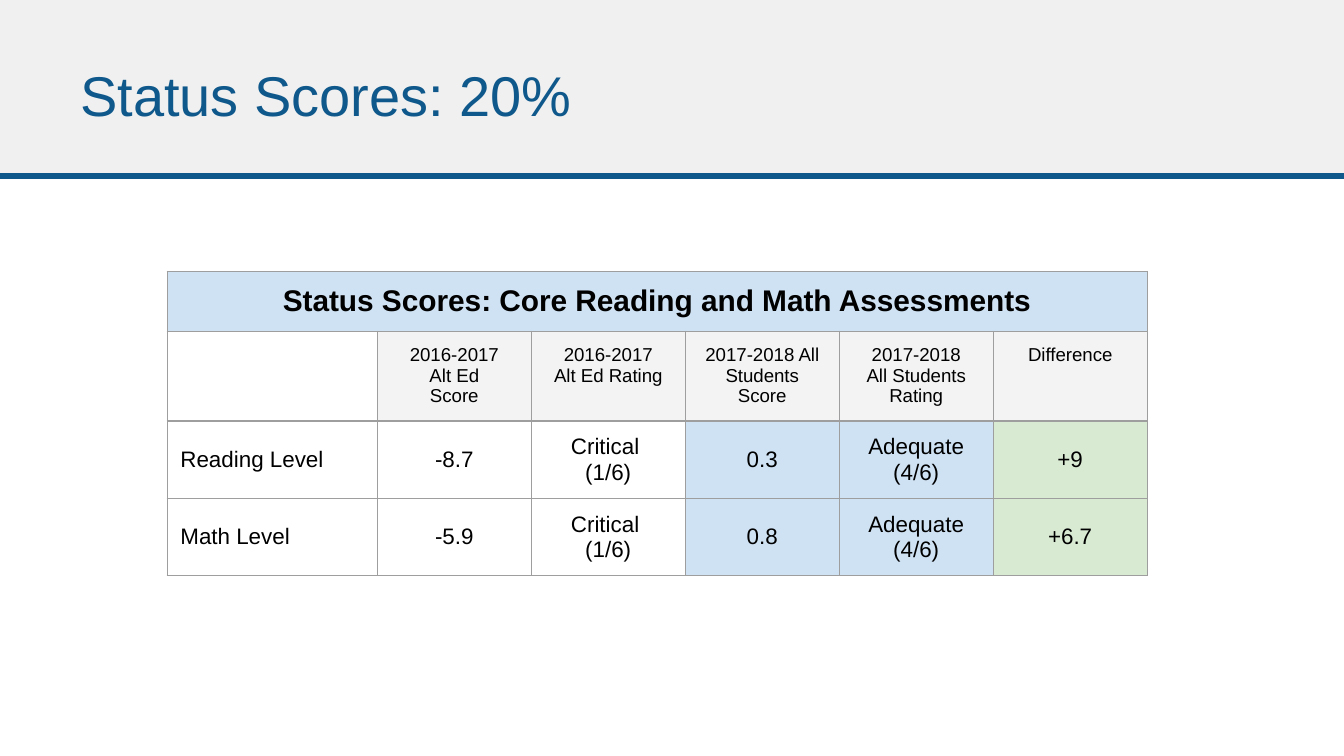
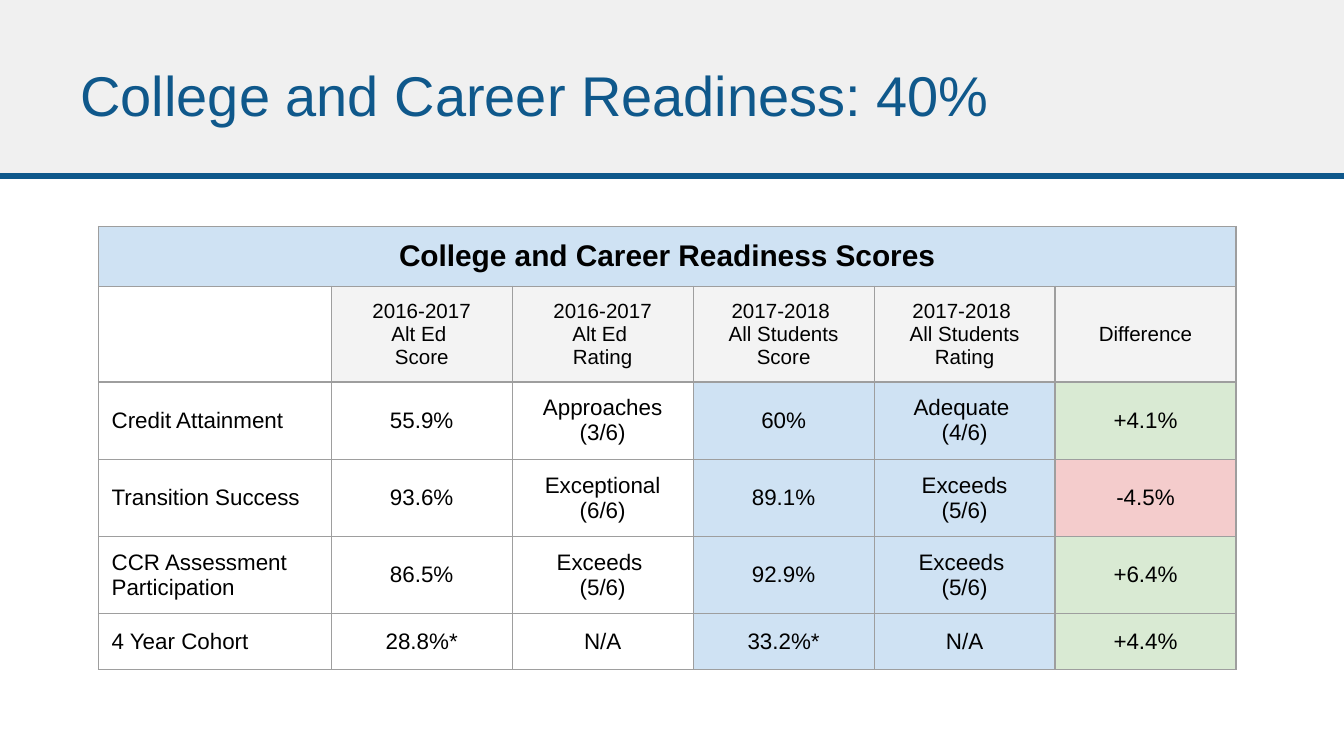
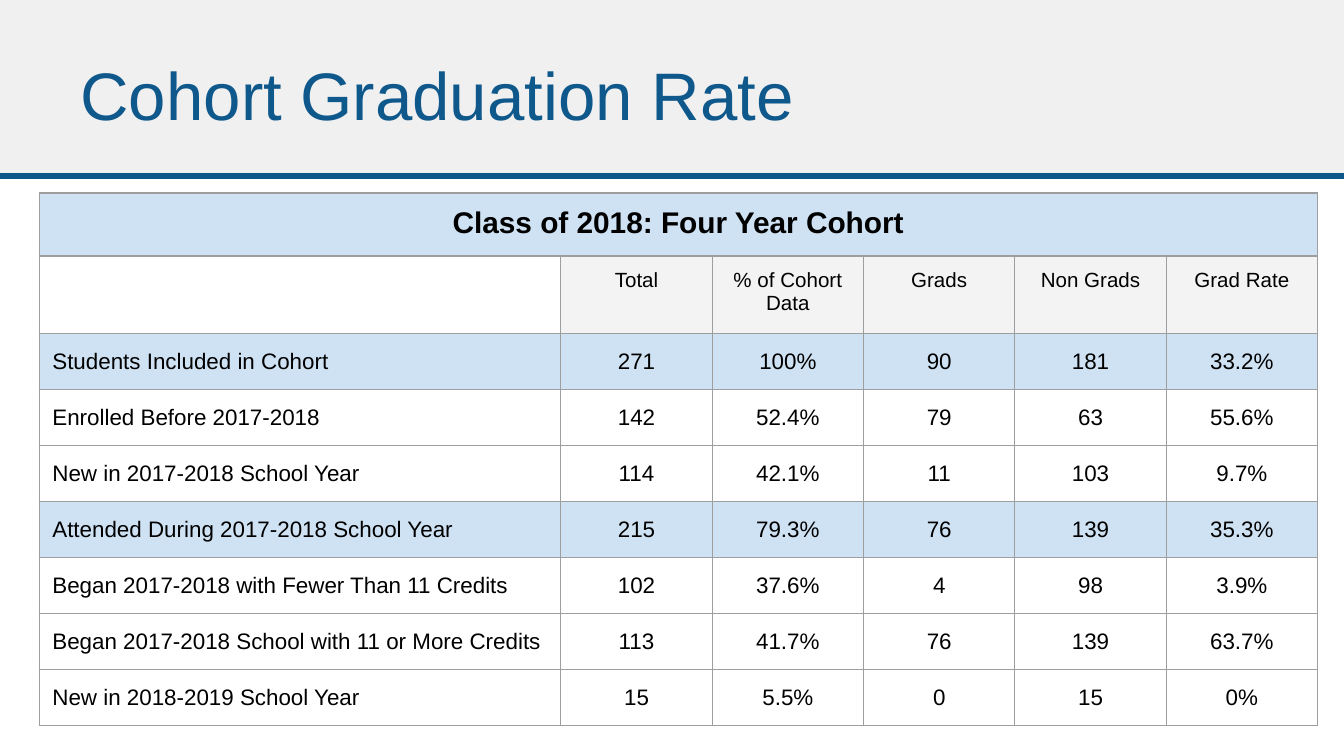
from lxml.etree import SubElement
from pptx import Presentation
from pptx.dml.color import RGBColor
from pptx.enum.shapes import MSO_CONNECTOR, MSO_SHAPE
from pptx.enum.text import MSO_ANCHOR, MSO_AUTO_SIZE, PP_ALIGN
from pptx.oxml.ns import qn
from pptx.util import Cm, Pt

# Shared look
FONT = "Arial"
BLUE = RGBColor(0x0F, 0x58, 0x8B)
BAND_GREY = RGBColor(0xF0, 0xF0, 0xF0)
HEADER_GREY = RGBColor(0xF3, 0xF3, 0xF3)
PALE_BLUE = RGBColor(0xCF, 0xE2, 0xF3)
PALE_GREEN = RGBColor(0xD9, 0xEA, 0xD3)
PALE_RED = RGBColor(0xF4, 0xCC, 0xCC)
BORDER_GREY = RGBColor(0x9E, 0x9E, 0x9E)
BLACK = RGBColor(0, 0, 0)
SLIDE_WIDTH, SLIDE_HEIGHT = 25.4, 14.29
BAND_HEIGHT = 3.33
INSET = Cm(0.25)

# Table contents: header cells, then body rows
STATUS_ROWS = [
    ["", "2016-2017\nAlt Ed\nScore", "2016-2017\nAlt Ed Rating",
     "2017-2018 All Students\nScore", "2017-2018\nAll Students\nRating", "Difference"],
    ["Reading Level", "-8.7", "Critical \n(1/6)", "0.3", "Adequate (4/6)", "+9"],
    ["Math Level", "-5.9", "Critical \n(1/6)", "0.8", "Adequate (4/6)", "+6.7"],
]
READINESS_ROWS = [
    ["", "2016-2017\nAlt Ed \nScore", "2016-2017\nAlt Ed \nRating",
     "2017-2018 \nAll Students Score", "2017-2018 \nAll Students Rating", "Difference"],
    ["Credit Attainment", "55.9%", "Approaches (3/6)", "60%", "Adequate \n(4/6)", "+4.1%"],
    ["Transition Success", "93.6%", "Exceptional (6/6)", "89.1%", "Exceeds\n(5/6)", "-4.5%"],
    ["CCR Assessment Participation", "86.5%", "Exceeds \n(5/6)", "92.9%",
     "Exceeds \n(5/6)", "+6.4%"],
    ["4 Year Cohort", "28.8%*", "N/A", "33.2%*", "N/A", "+4.4%"],
]
COHORT_ROWS = [
    ["", "Total", "% of Cohort Data", "Grads", "Non Grads", "Grad Rate"],
    ["Students Included in Cohort", "271", "100%", "90", "181", "33.2%"],
    ["Enrolled Before 2017-2018", "142", "52.4%", "79", "63", "55.6%"],
    ["New in 2017-2018 School Year", "114", "42.1%", "11", "103", "9.7%"],
    ["Attended During 2017-2018 School Year", "215", "79.3%", "76", "139", "35.3%"],
    ["Began 2017-2018 with Fewer Than 11 Credits", "102", "37.6%", "4", "98", "3.9%"],
    ["Began 2017-2018 School with 11 or More Credits", "113", "41.7%", "76", "139", "63.7%"],
    ["New in 2018-2019 School Year", "15", "5.5%", "0", "15", "0%"],
]


def comparison_fill(row, column, text):
    """Blue for the current year, green or red for the difference."""
    if column in (3, 4):
        return PALE_BLUE
    if column == 5:
        return PALE_RED if text.startswith("-") else PALE_GREEN
    return None


def cohort_fill(row, column, text):
    """Blue for the two rows that head a group."""
    return PALE_BLUE if row in (2, 5) else None


def add_header_band(slide, layout):
    """Draw the band and its rule, and move them to the layout behind the title."""
    band = slide.shapes.add_shape(MSO_SHAPE.RECTANGLE, 0, 0, Cm(SLIDE_WIDTH), Cm(BAND_HEIGHT))
    band.shadow.inherit = False
    band.fill.solid()
    band.fill.fore_color.rgb = BAND_GREY
    band.line.fill.background()
    rule = slide.shapes.add_connector(
        MSO_CONNECTOR.STRAIGHT, 0, Cm(BAND_HEIGHT), Cm(SLIDE_WIDTH), Cm(BAND_HEIGHT))
    rule.line.color.rgb = BLUE
    rule.line.width = Pt(3)
    SubElement(rule._element.spPr, qn("a:effectLst"))
    for index, shape in enumerate((band, rule), start=2):
        layout.shapes._spTree.insert(index, shape._element)


def format_runs(paragraph, size, color, bold=False):
    for run in paragraph.runs:
        run.font.name = FONT
        run.font.size = Pt(size)
        run.font.bold = bold
        run.font.color.rgb = color
    for line_break in paragraph._p.findall(qn("a:br")):
        SubElement(line_break, qn("a:rPr"), sz=str(size * 100))


def set_title(slide, text, size):
    title = slide.shapes.title
    title.left, title.top, title.width, title.height = Cm(1.27), Cm(0.58), Cm(19.48), Cm(2.39)
    frame = title.text_frame
    frame.text = text
    frame.word_wrap = True
    frame.auto_size = MSO_AUTO_SIZE.NONE
    frame.vertical_anchor = MSO_ANCHOR.MIDDLE
    frame.margin_left = frame.margin_right = frame.margin_top = frame.margin_bottom = INSET
    frame.paragraphs[0].alignment = PP_ALIGN.LEFT
    format_runs(frame.paragraphs[0], size, BLUE)


def add_borders(cell):
    properties = cell._tc.get_or_add_tcPr()
    for side in ("lnL", "lnR", "lnT", "lnB"):
        line = SubElement(properties, qn(f"a:{side}"), w=str(Pt(0.75)))
        fill = SubElement(line, qn("a:solidFill"))
        SubElement(fill, qn("a:srgbClr"), val=str(BORDER_GREY))


def fill_cell(cell, text, size, fill=None, bold=False,
              align=PP_ALIGN.CENTER, anchor=MSO_ANCHOR.MIDDLE):
    add_borders(cell)
    if fill is None:
        cell.fill.background()
    else:
        cell.fill.solid()
        cell.fill.fore_color.rgb = fill
    cell.margin_left = cell.margin_right = cell.margin_top = cell.margin_bottom = INSET
    cell.vertical_anchor = anchor
    paragraph = cell.text_frame.paragraphs[0]
    paragraph.text = text
    paragraph.alignment = align
    format_runs(paragraph, size, BLACK, bold)


def add_score_table(slide, left, top, label_width, value_width, heights, caption, rows,
                    body_fill, header_size=11, header_anchor=MSO_ANCHOR.TOP):
    column_count = len(rows[0])
    widths = [label_width] + [value_width] * (column_count - 1)
    table = slide.shapes.add_table(
        len(heights), column_count, Cm(left), Cm(top), Cm(sum(widths)), Cm(sum(heights))).table
    table.first_row = table.horz_banding = False
    for column, width in zip(table.columns, widths):
        column.width = Cm(width)
    for row, height in zip(table.rows, heights):
        row.height = Cm(height)

    # Caption across all columns
    for column in range(column_count):
        fill_cell(table.cell(0, column), "" if column else caption, 16, PALE_BLUE,
                  bold=True, anchor=MSO_ANCHOR.TOP)
    table.cell(0, 0).merge(table.cell(0, column_count - 1))

    # Header row, then body rows
    for row, texts in enumerate(rows, start=1):
        for column, text in enumerate(texts):
            cell = table.cell(row, column)
            if row == 1:
                fill_cell(cell, text, header_size, HEADER_GREY if column else None,
                          anchor=header_anchor)
            else:
                fill_cell(cell, text, 12, body_fill(row, column, text),
                          align=PP_ALIGN.CENTER if column else PP_ALIGN.LEFT)


def main():
    presentation = Presentation()
    presentation.slide_width = Cm(SLIDE_WIDTH)
    presentation.slide_height = Cm(SLIDE_HEIGHT)
    layout = presentation.slide_layouts[5]

    # Status scores
    slide = presentation.slides.add_slide(layout)
    add_header_band(slide, layout)
    set_title(slide, "Status Scores: 20%", 30)
    add_score_table(slide, 3.16, 5.13, 3.97, 2.91, [1.13, 1.7] + [1.46] * 2,
                    "Status Scores: Core Reading and Math Assessments", STATUS_ROWS,
                    comparison_fill, header_size=10)

    # College and career readiness
    slide = presentation.slides.add_slide(layout)
    set_title(slide, "College and Career Readiness: 40%", 30)
    add_score_table(slide, 1.86, 4.28, 4.4, 3.42, [1.13, 1.81] + [1.46] * 3 + [1.06],
                    "College and Career Readiness Scores", READINESS_ROWS,
                    comparison_fill, header_anchor=MSO_ANCHOR.MIDDLE)

    # Cohort graduation rate
    slide = presentation.slides.add_slide(layout)
    set_title(slide, "Cohort Graduation Rate", 36)
    add_score_table(slide, 0.74, 3.65, 9.86, 2.86, [1.19, 1.46] + [1.06] * 7,
                    "Class of 2018: Four Year Cohort", COHORT_ROWS, cohort_fill)

    presentation.save("out.pptx")


if __name__ == "__main__":
    main()
